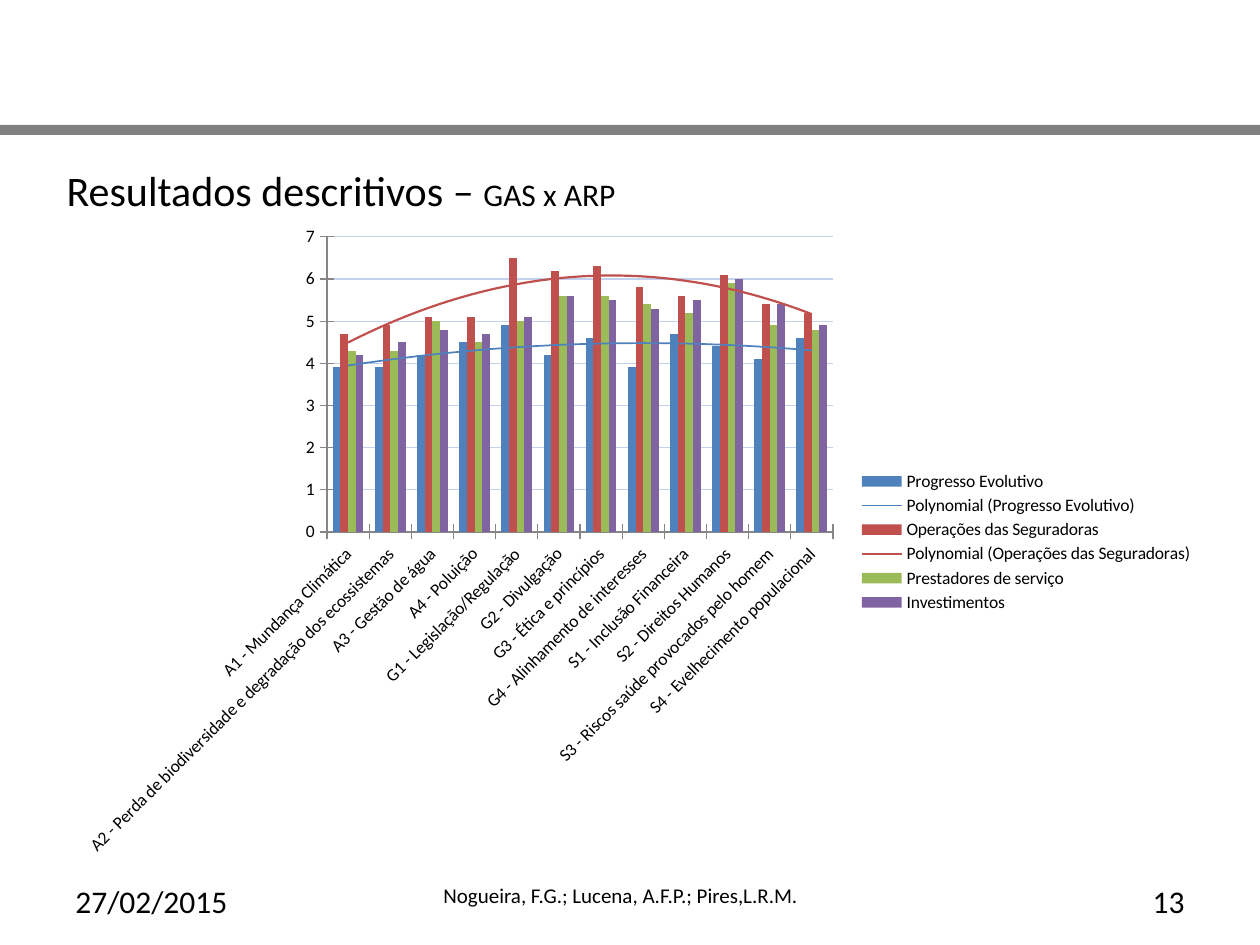
from dataclasses import dataclass

from lxml import etree
from pptx import Presentation
from pptx.chart.data import CategoryChartData
from pptx.dml.color import RGBColor
from pptx.enum.chart import XL_CHART_TYPE, XL_LEGEND_POSITION, XL_TICK_MARK
from pptx.enum.shapes import MSO_SHAPE
from pptx.enum.text import MSO_ANCHOR, PP_ALIGN
from pptx.oxml import parse_xml
from pptx.oxml.ns import nsdecls, qn
from pptx.util import Inches, Pt

COLUMNS = XL_CHART_TYPE.COLUMN_CLUSTERED
LEGEND_RIGHT = XL_LEGEND_POSITION.RIGHT
TICK_CROSS = XL_TICK_MARK.CROSS
RECTANGLE = MSO_SHAPE.RECTANGLE
TOP, MIDDLE = MSO_ANCHOR.TOP, MSO_ANCHOR.MIDDLE
LEFT, RIGHT = PP_ALIGN.LEFT, PP_ALIGN.RIGHT
TITLE_ONLY = 5
PX_PER_INCH = 126


@dataclass(frozen=True)
class Theme:
    """Colours, font and type sizes of the deck."""
    font: str = "Calibri"
    ink: str = "000000"
    band: str = "808080"
    axis: str = "868686"
    grid: str = "C2D1ED"
    title: int = 24
    subtitle: int = 18
    footer: int = 18
    authors: int = 12
    chart: int = 10


THEME = Theme()

CATEGORIES = [
    "A1 - Mundança Climática",
    "A2 - Perda de biodiversidade e degradação dos ecossistemas",
    "A3 - Gestão de água",
    "A4 - Poluição",
    "G1 - Legislação/Regulação",
    "G2 - Divulgação",
    "G3 - Ética e princípios",
    "G4 - Alinhamento de interesses",
    "S1 - Inclusão Financeira",
    "S2 - Direitos Humanos",
    "S3 - Riscos saúde provocados pelo homem",
    "S4 - Evelhecimento populacional",
]
# name, colour, trend line width in points (0 for none), values
SERIES = [
    ("Progresso Evolutivo", "4F81BD", 1,
     [3.9, 3.9, 4.2, 4.5, 4.9, 4.2, 4.6, 3.9, 4.7, 4.4, 4.1, 4.6]),
    ("Operações das Seguradoras", "C0504D", 1.25,
     [4.7, 4.9, 5.1, 5.1, 6.5, 6.2, 6.3, 5.8, 5.6, 6.1, 5.4, 5.2]),
    ("Prestadores de serviço", "9BBB59", 0,
     [4.3, 4.3, 5, 4.5, 5, 5.6, 5.6, 5.4, 5.2, 5.9, 4.9, 4.8]),
    ("Investimentos", "8064A2", 0,
     [4.2, 4.5, 4.8, 4.7, 5.1, 5.6, 5.5, 5.3, 5.5, 6, 5.4, 4.9]),
]


def px(length):
    """Turn pixels into EMU."""
    return round(length * Inches(1) / PX_PER_INCH)


def rgb(colour):
    """Turn a hex string into a colour."""
    return RGBColor.from_string(colour)


def style_font(font, size):
    """Apply the theme font and ink at a size."""
    font.name, font.size = THEME.font, Pt(size)
    font.color.rgb = rgb(THEME.ink)


def write(shape, *pieces, align=LEFT, anchor=TOP, after=0):
    """Write (text, size) pieces as one paragraph in a shape."""
    frame = shape.text_frame
    frame.word_wrap, frame.vertical_anchor = True, anchor
    para = frame.paragraphs[0]
    para.alignment, para.space_after = align, Pt(after)
    for text, size in pieces:
        span = para.add_run()
        span.text = text
        style_font(span.font, size)


def add_band(page, box):
    """Draw the grey band across the page."""
    band = page.shapes.add_shape(RECTANGLE, *map(px, box))
    band.shadow.inherit = False
    band.fill.solid()
    band.fill.fore_color.rgb = rgb(THEME.band)
    band.line.fill.background()


def add_title(page, box):
    """Place and fill the title placeholder."""
    title = page.shapes.title
    title.left, title.top, title.width, title.height = map(px, box)
    write(title, ("Resultados descritivos – ", THEME.title),
          ("GAS x ARP", THEME.subtitle), anchor=MIDDLE, after=6)


def add_footer(page, box):
    """Place date, authors and page number along the footer."""
    left, top, width, height = box
    side, middle = 294, 400
    parts = [
        (0, side, "27/02/2015", THEME.footer, LEFT),
        (368, middle, "Nogueira, F.G.; Lucena, A.F.P.; Pires,L.R.M.",
         THEME.authors, LEFT),
        (width - side, side, "13", THEME.footer, RIGHT),
    ]
    for offset, part_width, text, size, align in parts:
        label = page.shapes.add_textbox(
            *map(px, (left + offset, top, part_width, height)))
        write(label, (text, size), align=align)


def add_trend(series, colour, width):
    """Add a second-order polynomial trend line to a series."""
    trend = parse_xml(
        f'<c:trendline {nsdecls("c", "a")}><c:spPr><a:ln w="{Pt(width)}">'
        f'<a:solidFill><a:srgbClr val="{colour}"/></a:solidFill></a:ln></c:spPr>'
        '<c:trendlineType val="poly"/><c:order val="2"/>'
        '<c:dispRSqr val="0"/><c:dispEq val="0"/></c:trendline>')
    series._element.find(qn("c:cat")).addprevious(trend)


def set_layout(element, box, area, inner=False):
    """Fix a chart part at an area given in px relative to the chart box."""
    for old in element.findall(qn("c:layout")):
        element.remove(old)
    layout = etree.Element(qn("c:layout"))
    manual = etree.SubElement(layout, qn("c:manualLayout"))
    settings = [("layoutTarget", "inner")] if inner else []
    settings += [("xMode", "edge"), ("yMode", "edge")]
    sizes = (box[2], box[3]) * 2
    settings += [(key, f"{part / size:.4f}")
                 for key, part, size in zip("xywh", area, sizes)]
    for key, value in settings:
        etree.SubElement(manual, qn(f"c:{key}")).set("val", value)
    if inner:
        element.insert(0, layout)
    else:
        element.find(qn("c:legendPos")).addnext(layout)


def style_axes(chart):
    """Format both axes and the grid."""
    for axis in (chart.category_axis, chart.value_axis):
        axis.major_tick_mark = TICK_CROSS
        axis.format.line.color.rgb = rgb(THEME.axis)
        style_font(axis.tick_labels.font, THEME.chart)
    names = chart.category_axis._element.find(qn("c:txPr"))
    names.find(qn("a:bodyPr")).set("rot", "-2700000")
    values = chart.value_axis
    values.minimum_scale, values.maximum_scale, values.major_unit = 0, 7, 1
    values.tick_labels.number_format = "0"
    values.tick_labels.number_format_is_linked = False
    grid = values.major_gridlines.format.line
    grid.color.rgb, grid.width = rgb(THEME.grid), Pt(0.75)


def add_column_chart(page, box):
    """Add the clustered columns with trend lines and legend."""
    data = CategoryChartData(number_format="0.0")
    data.categories = CATEGORIES
    for name, _, _, values in SERIES:
        data.add_series(name, values)
    chart = page.shapes.add_chart(COLUMNS, *map(px, box), data).chart
    chart.has_title = False
    style_font(chart.font, THEME.chart)
    plot = chart.plots[0]
    plot.gap_width, plot.overlap, plot.vary_by_categories = 150, 0, False
    for series, (_, colour, trend_width, _) in zip(plot.series, SERIES):
        series.format.fill.solid()
        series.format.fill.fore_color.rgb = rgb(colour)
        if trend_width:
            add_trend(series, colour, trend_width)
    style_axes(chart)
    chart.has_legend = True
    chart.legend.position = LEGEND_RIGHT
    chart.legend.include_in_layout = False
    style_font(chart.legend.font, THEME.chart)
    plot_area = chart._chartSpace.chart.plotArea
    set_layout(plot_area, box, (263, 23, 506, 295), inner=True)
    set_layout(chart.legend._element, box, (792, 253, 340, 150))


def main():
    """Build and save the deck."""
    deck = Presentation()
    deck.slide_width, deck.slide_height = px(1260), px(945)
    page = deck.slides.add_slide(deck.slide_layouts[TITLE_ONLY])
    add_band(page, (0, 125, 1260, 10))
    add_title(page, (54, 155, 1150, 69))
    add_column_chart(page, (64, 214, 1142, 655))
    add_footer(page, (63, 876, 1134, 50))
    deck.save("out.pptx")


if __name__ == "__main__":
    main()
